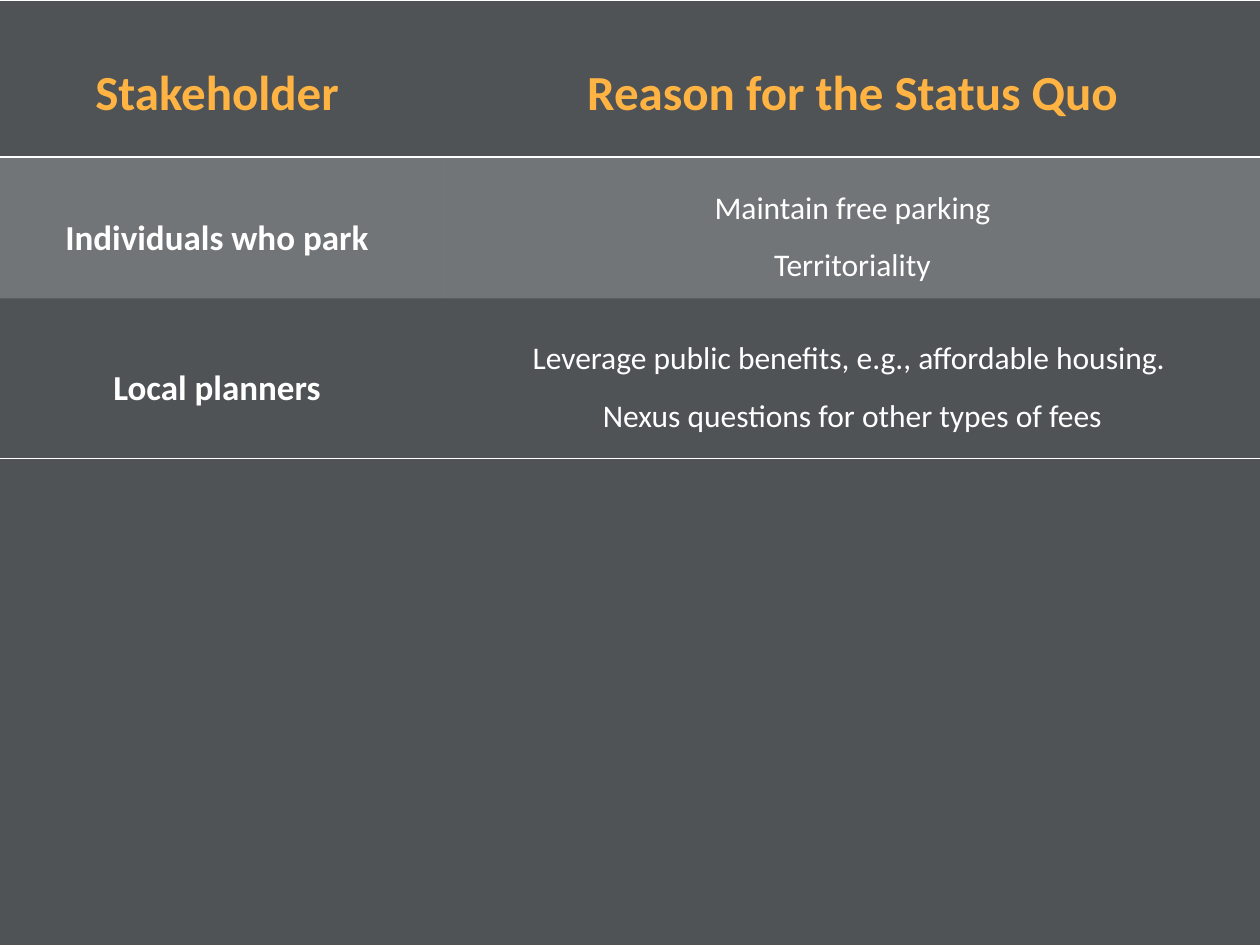
"""Build a slide with a table of stakeholders and their reasons for the status quo."""
from lxml.etree import SubElement
from pptx import Presentation
from pptx.dml.color import RGBColor
from pptx.enum.text import MSO_ANCHOR as Anchor, PP_ALIGN as Align
from pptx.oxml import parse_xml
from pptx.oxml.ns import nsdecls, qn
from pptx.util import Pt

PX = 914400 / 126
COLORS = {"background": "4F5355", "heading": "FFB343", "text": "FFFFFF", "rule": "FFFFFF", "band": "FFFFFF"}
NO_STYLE = "{2D5ABB26-0587-4C30-8999-92F81FD0307C}"
COLUMNS = [454, 817]
ROWS = [157, 141, 160]
CONTENT = [
    ("Stakeholder", "Reason for the Status Quo"),
    ("Individuals who park", "Maintain free parking\nTerritoriality"),
    ("Local planners", "Leverage public benefits, e.g., affordable housing. \nNexus questions for other types of fees"),
]
RULES = [("lnB", "lnT"), (), ("lnB",)]


def px(length):
    return round(length * PX)


prs = Presentation()
prs.slide_width, prs.slide_height = px(1260), px(945)
slide = prs.slides.add_slide(prs.slide_layouts[6])
slide.background.fill.solid()
slide.background.fill.fore_color.rgb = RGBColor.from_string(COLORS["background"])

stakeholders = slide.shapes.add_table(
    len(ROWS), len(COLUMNS), px(-10), 0, px(sum(COLUMNS)), px(sum(ROWS))
).table
stakeholders.first_row = stakeholders.horz_banding = False
stakeholders._tbl.tblPr.find(qn("a:tableStyleId")).text = NO_STYLE
for column, width in zip(stakeholders.columns, COLUMNS):
    column.width = px(width)
for row, height in zip(stakeholders.rows, ROWS):
    row.height = px(height)

for r, entries in enumerate(CONTENT):
    for c, entry in enumerate(entries):
        cell = stakeholders.cell(r, c)
        is_header, is_reason = r == 0, r > 0 and c == 1
        cell.vertical_anchor = Anchor.MIDDLE
        cell.margin_left = cell.margin_right = px(13 if is_reason else 6)
        cell.margin_top = cell.margin_bottom = px(13 if is_reason else 0)
        cell.text_frame.text = entry
        for paragraph in cell.text_frame.paragraphs:
            paragraph.alignment = Align.CENTER
            paragraph.line_spacing = 1.5
            for run in paragraph.runs:
                run.font.name = "Calibri"
                run.font.size = Pt(28 if is_header else 18 if is_reason else 20)
                run.font.bold = not is_reason
                run.font.color.rgb = RGBColor.from_string(COLORS["heading" if is_header else "text"])

        if r == 1:
            cell.fill.solid()
            cell.fill.fore_color.rgb = RGBColor.from_string(COLORS["band"])
            band = cell._tc.tcPr.find(".//" + qn("a:srgbClr"))
            SubElement(band, qn("a:alpha"), val="20000")
        else:
            cell.fill.background()
        for edge in RULES[r]:
            cell._tc.tcPr.insert(0, parse_xml(
                f'<a:{edge} {nsdecls("a")} w="{Pt(1)}"><a:solidFill>'
                f'<a:srgbClr val="{COLORS["rule"]}"/></a:solidFill></a:{edge}>'
            ))

prs.save("out.pptx")
